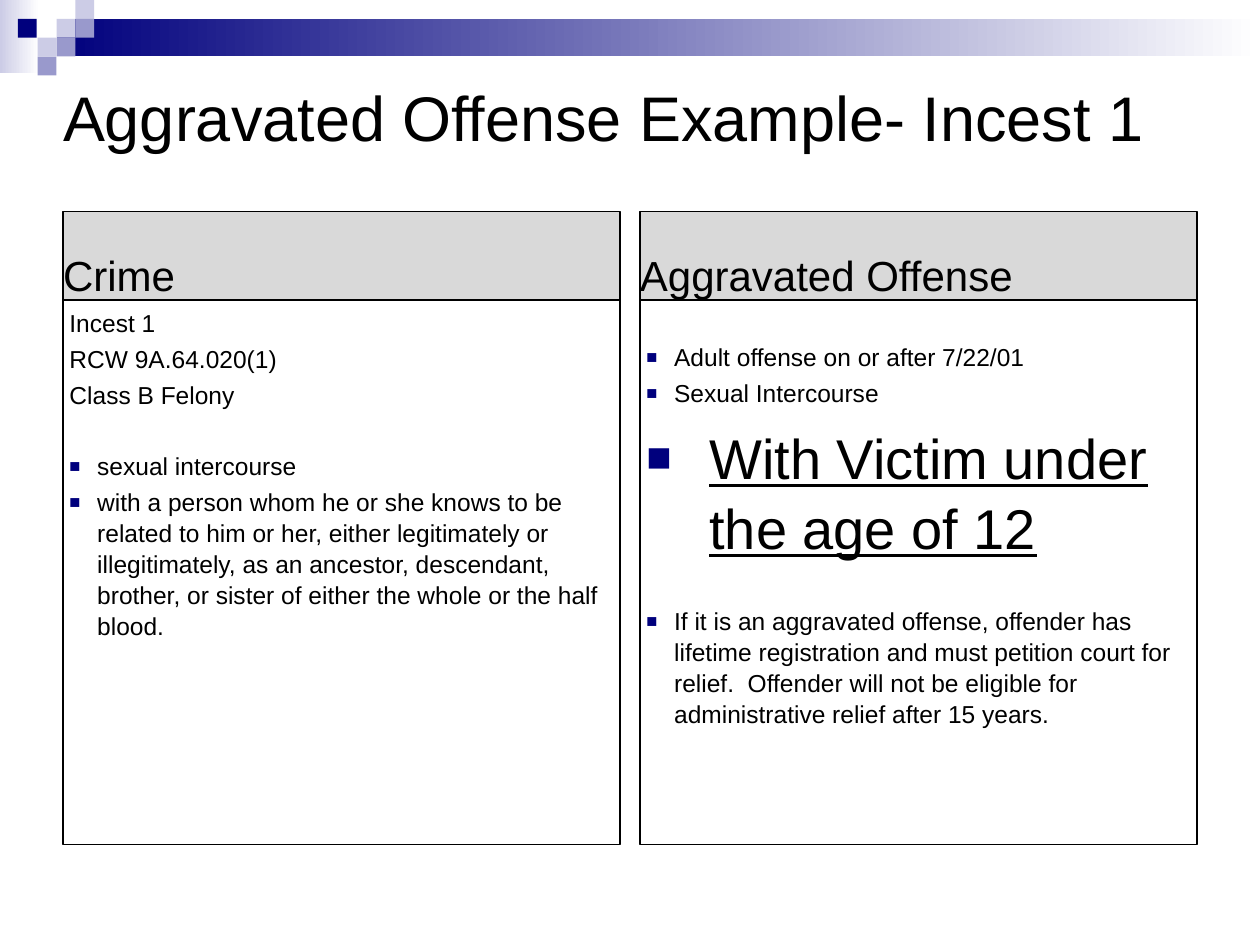
from lxml import etree
from pptx import Presentation
from pptx import util as u
from pptx.dml.color import RGBColor
from pptx.enum import shapes, text
from pptx.oxml.ns import qn

HUES = {"navy": "00007D", "mid": "9999CC", "pale": "CCCCE6",
        "gray": "D9D9D9", "black": "000000", "white": "FFFFFF"}


class Deck:
    face = "Arial"

    def __init__(self):
        self.prs = Presentation()
        self.prs.slide_width, self.prs.slide_height = u.Cm(25.4), u.Cm(19.05)
        self.slide = self.prs.slides.add_slide(self.prs.slide_layouts[4])

    def hue(self, name):
        return RGBColor.from_string(HUES[name])

    def block(self, box, *names):
        rect = self.slide.shapes.add_shape(
            shapes.MSO_SHAPE.RECTANGLE, *map(u.Cm, box))
        rect.shadow.inherit = False
        rect.line.fill.background()
        if len(names) == 1:
            rect.fill.solid()
            rect.fill.fore_color.rgb = self.hue(names[0])
            return
        rect.fill.gradient()
        rect.fill.gradient_angle = 0
        for stop, name in zip(rect.fill.gradient_stops, names):
            stop.color.rgb = self.hue(name)

    def holder(self, idx, box, pad=0, top=0, anchor=text.MSO_ANCHOR.TOP):
        item = next(p for p in self.slide.placeholders
                    if p.placeholder_format.idx == idx)
        item.left, item.top, item.width, item.height = map(u.Cm, box)
        frame = item.text_frame
        frame.word_wrap = True
        frame.auto_size = text.MSO_AUTO_SIZE.NONE
        frame.vertical_anchor = anchor
        frame.margin_left = frame.margin_right = u.Cm(pad)
        frame.margin_bottom, frame.margin_top = u.Cm(pad), u.Cm(top)
        return item

    def outline(self, item):
        item.line.color.rgb = self.hue("black")
        item.line.width = u.Pt(0.75)

    def bullet(self, para, indent):
        props = para._p.get_or_add_pPr()
        props.set("marL", str(u.Cm(indent)))
        props.set("indent", str(-u.Cm(indent)))
        if not indent:
            etree.SubElement(props, qn("a:buNone"))
            return
        tint = etree.SubElement(props, qn("a:buClr"))
        etree.SubElement(tint, qn("a:srgbClr"), val=HUES["navy"])
        etree.SubElement(props, qn("a:buSzPct"), val="75000")
        etree.SubElement(props, qn("a:buFont"), typeface=self.face)
        etree.SubElement(props, qn("a:buChar"), char="■")

    def line(self, para, words, size, before=0, indent=0, under=False):
        para.text = words
        para.alignment = text.PP_ALIGN.LEFT
        para.space_before = u.Pt(before)
        self.bullet(para, indent)
        font = para.font
        font.name, font.size = self.face, u.Pt(size)
        font.bold, font.underline = False, under
        font.color.rgb = self.hue("black")

    def title(self, words, box):
        item = self.holder(0, box, anchor=text.MSO_ANCHOR.MIDDLE)
        self.line(item.text_frame.paragraphs[0], words, 36)

    def header(self, idx, words, box):
        item = self.holder(idx, box, anchor=text.MSO_ANCHOR.BOTTOM)
        item.fill.solid()
        item.fill.fore_color.rgb = self.hue("gray")
        self.outline(item)
        self.line(item.text_frame.paragraphs[0], words, 24, 5)

    def list(self, idx, rows, box, top):
        item = self.holder(idx, box, 0.13, top)
        self.outline(item)
        frame = item.text_frame
        for num, row in enumerate(rows):
            para = frame.add_paragraph() if num else frame.paragraphs[0]
            para.line_spacing = 1.05
            self.line(para, *row)


def main():
    deck = Deck()
    unit = 0.38
    deck.block((0, 0, 0.79, 1.47), "pale", "white")
    deck.block((1.14, unit, 24.26, 2 * unit), "navy", "white")
    for left, row, name in [(1.14, 1, "pale"), (1.52, 0, "pale"),
                            (1.52, 1, "mid"), (0.76, 2, "pale"),
                            (0.36, 1, "navy"), (1.14, 2, "mid"),
                            (0.76, 3, "mid")]:
        deck.block((left, row * unit, unit, unit), name)

    deck.title("Aggravated Offense Example- Incest 1",
               (1.27, 0.76, 22.86, 3.18))

    crime = [
        ("Incest 1", 14, 3),
        ("RCW 9A.64.020(1)", 14, 3),
        ("Class B Felony", 14, 3),
        ("sexual intercourse", 14, 23, 0.56),
        ("with a person whom he or she knows to be related to him or her, "
         "either legitimately or illegitimately, as an ancestor, descendant, "
         "brother, or sister of either the whole or the half blood.",
         14, 3, 0.56),
    ]
    grave = [
        ("Adult offense on or after 7/22/01", 14, 3, 0.56),
        ("Sexual Intercourse", 14, 3, 0.56),
        ("With Victim under the age of 12", 32, 7, 1.27, True),
        ("If it is an aggravated offense, offender has lifetime registration "
         "and must petition court for relief.  Offender will not be eligible "
         "for administrative relief after 15 years.", 14, 25, 0.56),
    ]
    cols = [("Crime", crime, 0.13), ("Aggravated Offense", grave, 0.82)]
    for num, (head, rows, top) in enumerate(cols):
        left = 1.27 + num * 11.63
        deck.header(1 + 2 * num, head, (left, 4.27, 11.23, 1.78))
        deck.list(2 + 2 * num, rows, (left, 6.05, 11.23, 10.97), top)

    deck.prs.save("out.pptx")


if __name__ == "__main__":
    main()
